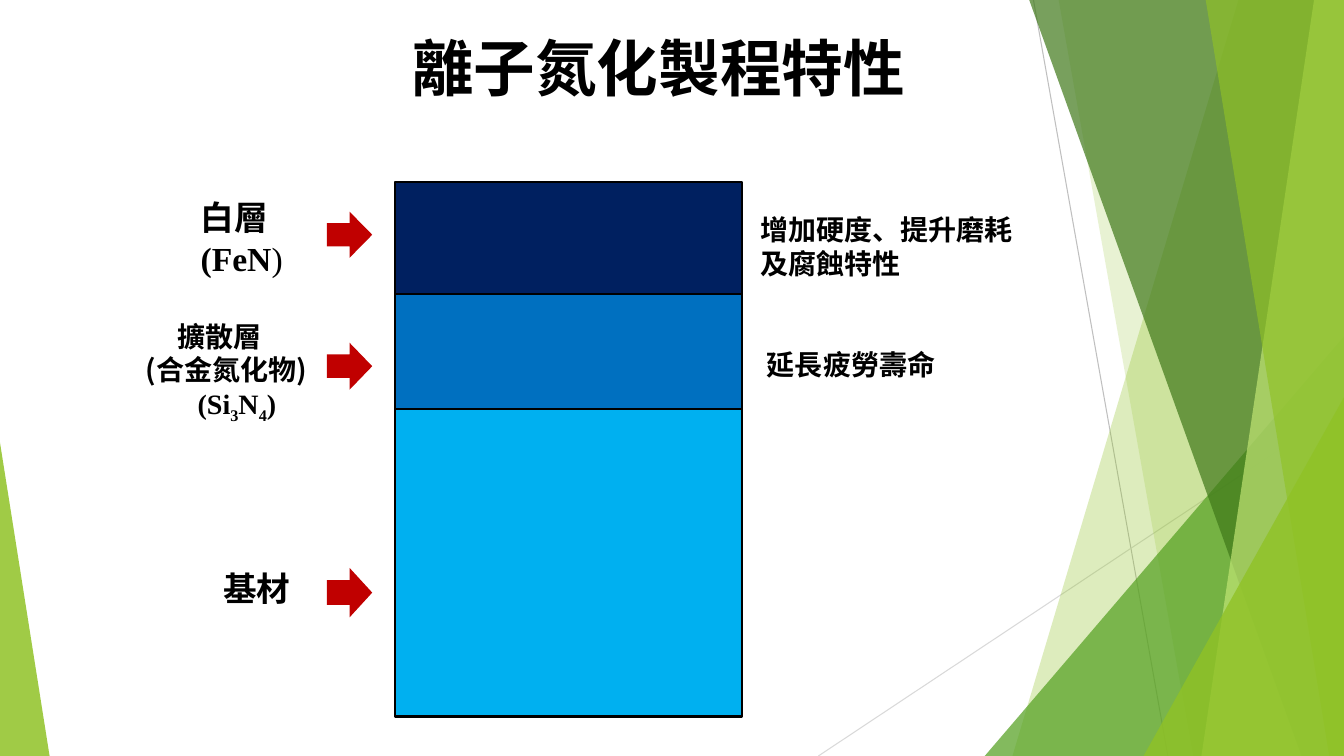
from lxml.etree import SubElement
from pptx import Presentation
from pptx.dml.color import RGBColor
from pptx.enum.shapes import MSO_CONNECTOR, MSO_SHAPE
from pptx.enum.text import MSO_ANCHOR, PP_ALIGN
from pptx.oxml.ns import qn
from pptx.util import Inches, Pt

BLACK = RGBColor(0x00, 0x00, 0x00)
LIME = RGBColor(0x90, 0xC2, 0x26)
GREEN = RGBColor(0x54, 0xA0, 0x21)
DARK_GREEN = RGBColor(0x3F, 0x78, 0x19)
PALE_LIME = RGBColor(0xC0, 0xE4, 0x74)
GREY = RGBColor(0xBF, 0xBF, 0xBF)
LIGHT_GREY = RGBColor(0xD9, 0xD9, 0xD9)
NAVY = RGBColor(0x00, 0x20, 0x60)
BLUE = RGBColor(0x00, 0x70, 0xC0)
SKY = RGBColor(0x00, 0xB0, 0xF0)
RED = RGBColor(0xC0, 0x00, 0x00)

SERIF, SANS, CJK = "Times New Roman", "Cabin", "Noto Sans CJK SC"
COLS, ROWS = 80, 45

prs = Presentation()
prs.slide_width, prs.slide_height = Inches(13.33), Inches(7.5)
CELL = prs.slide_height / ROWS
slide = prs.slides.add_slide(prs.slide_layouts[5])
shapes = slide.shapes


def grid(*cells):
    """Turn counts of grid cells into lengths."""
    return [round(n * CELL) for n in cells]


def add_label(box, size, lines):
    """Write bold lines, each a font and its text, and return the paragraphs."""
    frame = shapes.add_textbox(*grid(*box)).text_frame
    frame.word_wrap = True
    for i, (font, text) in enumerate(lines):
        line = frame.paragraphs[0] if i == 0 else frame.add_paragraph()
        line.text = text
        line.font.name, line.font.size, line.font.bold = font, Pt(size), True
        line.font.color.rgb = BLACK
    return frame.paragraphs


# Side decoration
for x1, y1, x2, y2, color in [(61.5, 0, 69.5, ROWS, GREY),
                              (COLS, 24.2, 48.7, ROWS, LIGHT_GREY)]:
    ray = shapes.add_connector(MSO_CONNECTOR.STRAIGHT, *grid(x1, y1, x2, y2))
    ray.line.color.rgb, ray.line.width = color, Pt(0.75)
    SubElement(ray._element.spPr, qn("a:effectLst"))

# Strips reach the right edge: (top x, bottom x).
# Wedges: (left, top, width, apex as a share of the width).
facets = [
    ((73.7, 60.25), LIME, 30),
    ((63, 71), LIME, 20),
    ((58.6, 20, 21.4, 1), GREEN, 72),
    ((61.25, 77.45), DARK_GREEN, 70),
    ((78.2, 71.5), PALE_LIME, 70),
    ((71.75, 79.1), LIME, 65),
    ((68.05, 23.6, 11.95, 1), LIME, 80),
    ((0, 26.35, 2.95, 0), LIME, 85),
]
for place, color, opacity in facets:
    if len(place) == 2:
        top_x, bottom_x = place
        outline = shapes.build_freeform(*grid(top_x, 0))
        outline.add_line_segments([grid(COLS, 0), grid(COLS, ROWS), grid(bottom_x, ROWS)])
        facet = outline.convert_to_shape()
    else:
        left, top, width, apex = place
        facet = shapes.add_shape(MSO_SHAPE.ISOSCELES_TRIANGLE,
                                 *grid(left, top, width, ROWS - top))
        facet.adjustments[0] = apex
    facet.shadow.inherit = False
    facet.line.fill.background()
    facet.fill.solid()
    facet.fill.fore_color.rgb = color
    tint = facet._element.spPr.find(qn("a:solidFill"))[0]
    SubElement(tint, qn("a:alpha"), val=str(opacity * 1000))

# Title
title = shapes.title
title.left, title.top, title.width, title.height = grid(5.9, 1.5, 66.6, 8.65)
title.text_frame.vertical_anchor = MSO_ANCHOR.TOP
title.text_frame.text = "離子氮化製程特性"
heading = title.text_frame.paragraphs[0]
heading.alignment = PP_ALIGN.CENTER
heading.font.name, heading.font.size, heading.font.bold = SERIF, Pt(44), True
heading.font.color.rgb = BLACK

# Names of the layers
white_layer = add_label((11.35, 11.45, 7.55, 5.45), 24, [(CJK, "白層"), (SERIF, "(FeN")])
bracket = white_layer[1].add_run()
bracket.text, bracket.font.bold = ")", False

diffusion = add_label((8.1, 18.7, 12, 8.7), 20,
                      [(SANS, "擴散層"), (CJK, "(合金氮化物)"), (SERIF, "(Si")])
diffusion[0]._p.get_or_add_pPr().set("marL", str(Inches(0.31)))
diffusion[2].alignment = PP_ALIGN.CENTER
for part in ["3", "N", "4", ")"]:
    run = diffusion[2].add_run()
    run.text = part
    if part.isdigit():
        run._r.get_or_add_rPr().set("baseline", "-25000")

add_label((12.7, 33.5, 6, 3), 24, [(SANS, "基材")])

# Effects of the layers
add_label((44.65, 12.35, 17.35, 4.6), 20, [(SANS, "增加硬度、提升磨耗及腐蝕特性")])
add_label((45.05, 20.4, 13.15, 2.65), 20, [(SANS, "延長疲勞壽命")])

# Stacked layers, each with its arrow
layer_top = 10.85
for height, color, arrow_top, arrow_height in [(6.65, NAVY, 12.6, 2.75),
                                               (6.85, BLUE, 20.4, 2.8),
                                               (18.3, SKY, 33.8, 2.95)]:
    layer = shapes.add_shape(MSO_SHAPE.RECTANGLE, *grid(23.5, layer_top, 20.65, height))
    layer.line.color.rgb, layer.line.width = BLACK, Pt(1.5)
    arrow = shapes.add_shape(MSO_SHAPE.RIGHT_ARROW, *grid(19.45, arrow_top, 2.7, arrow_height))
    arrow.line.fill.background()
    for block, fill in [(layer, color), (arrow, RED)]:
        block.shadow.inherit = False
        block.fill.solid()
        block.fill.fore_color.rgb = fill
    layer_top += height

prs.save("out.pptx")
